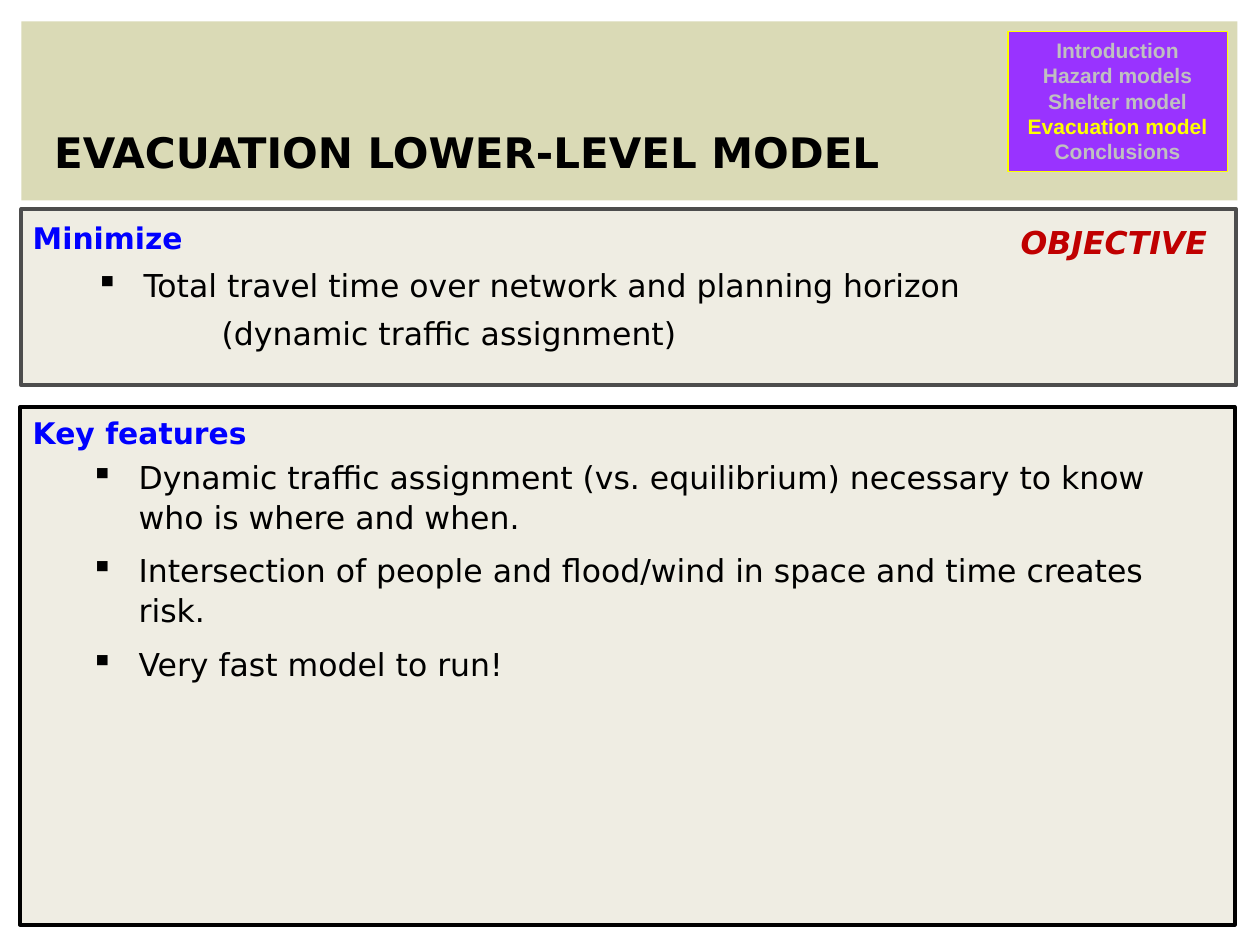
"""Build the evacuation lower-level model slide."""
import pptx
import pptx.util
import pptx.dml.color
import pptx.enum.shapes
import pptx.enum.text
import pptx.oxml.ns
import lxml.etree

COLORS = {
    "banner": "DADAB6", "panel": "EFEDE3", "agenda": "9933FF",
    "yellow": "FFFF00", "silver": "C0C0C0", "black": "000000",
    "gray": "4D4D4D", "blue": "0000FF", "red": "C00000",
}
COLORS = {name: pptx.dml.color.RGBColor.from_string(code) for name, code in COLORS.items()}
BODY_FONT = "DejaVu Sans"

deck = pptx.Presentation()
deck.slide_width = pptx.util.Inches(10)
deck.slide_height = pptx.util.Inches(7.5)
column = deck.slide_width / 100
row = deck.slide_height / 75
page = deck.slides.add_slide(deck.slide_layouts[6])


def add_box(left, top, width, height, fill=None, line=None, weight=2.25, inset=0):
    place = [int(left * column), int(top * row), int(width * column), int(height * row)]
    if fill:
        box = page.shapes.add_shape(pptx.enum.shapes.MSO_SHAPE.RECTANGLE, *place)
        box.shadow.inherit = False
        box.fill.solid()
        box.fill.fore_color.rgb = COLORS[fill]
        if line:
            box.line.color.rgb = COLORS[line]
            box.line.width = pptx.util.Pt(weight)
        else:
            box.line.fill.background()
    else:
        box = page.shapes.add_textbox(*place)
    frame = box.text_frame
    frame.word_wrap = True
    frame.margin_left = frame.margin_right = pptx.util.Inches(inset)
    frame.margin_top = frame.margin_bottom = pptx.util.Inches(inset / 2)
    return box


def add_para(box, text, size, color, bold=False, italic=False, font=BODY_FONT,
             align="LEFT", spacing=1.0, before=0, indent=0, bullet=False):
    frame = box.text_frame
    first = not frame.paragraphs[0].runs
    para = frame.paragraphs[0] if first else frame.add_paragraph()
    para.alignment = getattr(pptx.enum.text.PP_ALIGN, align)
    para.line_spacing = spacing
    para.space_before = pptx.util.Pt(0 if first else before)
    if indent:
        para.level = 1
        properties = para._p.get_or_add_pPr()
        properties.set("marL", str(pptx.util.Inches(indent)))
        properties.set("indent", str(pptx.util.Inches(-0.38 if bullet else 0)))
        if bullet:
            mark = lxml.etree.SubElement(properties, pptx.oxml.ns.qn("a:buChar"))
            mark.set("char", "▪")
    span = para.add_run()
    span.text = text
    span.font.name = font
    span.font.size = pptx.util.Pt(size)
    span.font.bold = bold
    span.font.italic = italic
    span.font.color.rgb = COLORS[color]


add_box(1.7, 1.7, 96.5, 14.2, fill="banner")
title = add_box(4.3, 2.9, 90.7, 11.1)
title.text_frame.vertical_anchor = pptx.enum.text.MSO_ANCHOR.BOTTOM
add_para(title, "EVACUATION LOWER-LEVEL MODEL", 24, "black", bold=True, spacing=1.04)

agenda = add_box(80, 2.5, 17.4, 11.1, fill="agenda", line="yellow", weight=0.75, inset=0.1)
agenda.text_frame.vertical_anchor = pptx.enum.text.MSO_ANCHOR.TOP
current = "Evacuation model"
for topic in ["Introduction", "Hazard models", "Shelter model", current, "Conclusions"]:
    add_para(agenda, topic, 12, "yellow" if topic == current else "silver",
             bold=True, font="Arial", align="CENTER")

add_box(1.6, 32.3, 96.4, 41.1, fill="panel", line="black")
add_box(1.7, 16.6, 96.4, 14, fill="panel", line="gray")

objective = add_box(79.5, 17.2, 17.8, 4, inset=0.1)
objective.text_frame.word_wrap = False
add_para(objective, "OBJECTIVE", 18, "red", bold=True, italic=True, align="CENTER")

goal = add_box(2.6, 17.3, 97, 8.4)
add_para(goal, "Minimize", 17, "blue", bold=True, spacing=1.05)
add_para(goal, "Total travel time over network and planning horizon", 18, "black",
         before=6, indent=0.88, bullet=True)
add_para(goal, "(dynamic traffic assignment)", 18, "black", before=6, indent=1.5)

features = add_box(2.2, 36.2, 94.1, 33.9)
for feature in [
    "Dynamic traffic assignment (vs. equilibrium) necessary to know who is where and when.",
    "Intersection of people and flood/wind in space and time creates risk.",
    "Very fast model to run!",
]:
    add_para(features, feature, 18, "black", spacing=1.05, before=8, indent=0.88, bullet=True)

heading = add_box(2.6, 32.8, 97, 3.6)
add_para(heading, "Key features", 17, "blue", bold=True, spacing=1.05)

deck.save("out.pptx")
